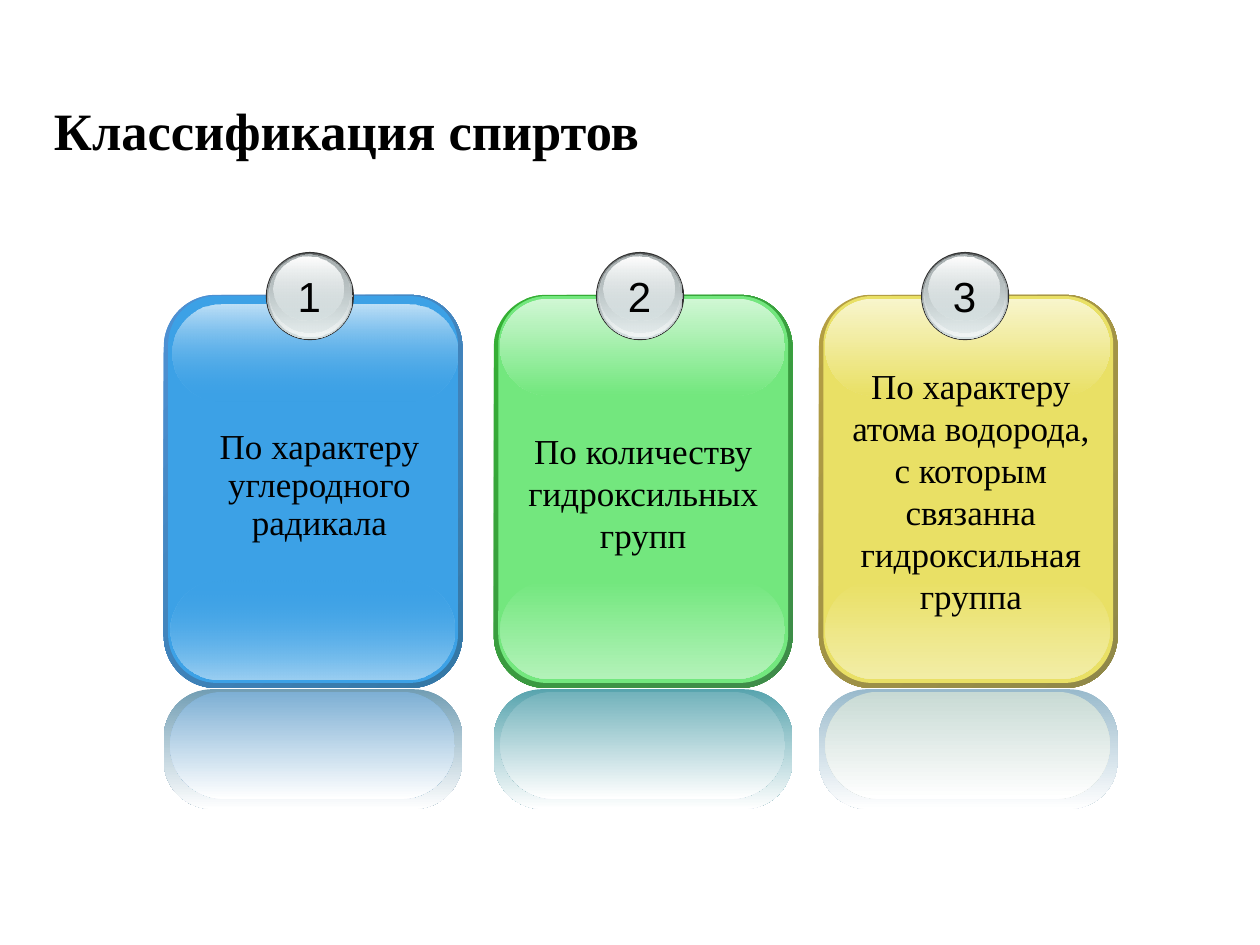
import dataclasses

import pptx
import pptx.dml.color
import pptx.enum.shapes
import pptx.enum.text
import pptx.oxml
import pptx.oxml.ns
import pptx.util

SHAPE = pptx.enum.shapes.MSO_SHAPE
ANCHOR = pptx.enum.text.MSO_ANCHOR
ALIGN = pptx.enum.text.PP_ALIGN


@dataclasses.dataclass(frozen=True)
class Theme:
    ink: str = "000000"
    serif: str = "Times New Roman"
    sans: str = "Arial"
    title_size: int = 30
    badge_size: int = 24
    body_size: int = 20
    rim: str = "333333"
    badge_layers: tuple = (
        ("636869", "D6E1E2", 100, 100),
        ("D6E1E2", "F1F5F5", 0, 100),
        ("AAB2B3", "D6E1E2", 100, 48),
        ("FFFFFF", "D6E1E2", 100, 38),
    )
    fade: str = "FFFFFF"


@dataclasses.dataclass(frozen=True)
class Card:
    left: float
    text: str
    text_box: tuple
    face: str
    edge: tuple
    shine: str
    glow: str
    mirror: tuple
    shine_at: tuple = (0.5, 23.7)
    alpha: int = 100
    spacing: float = 1.0


CARDS = (
    Card(13, "По характеру углеродного радикала", (2.6, 33.6, 19.5, 10.1),
         "3CA1E6", ("4E91D4", "3477A4"), "BEE0F7", "9BCFF2",
         ("729EB4", "7DAFD4"), shine_at=(0.7, 24.2), alpha=0, spacing=0.9),
    Card(39.2, "По количеству гидроксильных групп", (0.6, 33.6, 22.5, 11.1),
         "73E77E", ("34B034", "3F8B4A"), "D0F7D4", "B3F2B9",
         ("58A4AE", "72B2BB")),
    Card(65, "По характеру атома водорода, с которым связанна гидроксильная группа",
         (0.8, 28.4, 22.5, 21.2),
         "E9E065", ("B59F43", "8F8849"), "F8F5CC", "F2EDA6",
         ("99BACC", "C8DAD4")),
)

BADGE_BOXES = (
    (8.2, 20.1, 6.8, 6.8),
    (8.3, 20.1, 6.6, 6.6),
    (8.4, 20.2, 6.3, 6.2),
    (8.7, 20.4, 5.6, 5),
)


class SlideBuilder:
    COLS, ROWS = 100, 75

    def __init__(self, prs, theme):
        self.theme = theme
        self.col = prs.slide_width / self.COLS
        self.row = prs.slide_height / self.ROWS
        self.slide = prs.slides.add_slide(prs.slide_layouts[6])
        self.shapes = self.slide.shapes
        self.left = 0

    def place(self, box):
        x, y, w, h = box
        return (round((self.left + x) * self.col), round(y * self.row),
                round(w * self.col), round(h * self.row))

    def shape(self, kind, box, color, adj=None):
        sp = self.shapes.add_shape(kind, *self.place(box))
        sp.shadow.inherit = False
        sp.line.fill.background()
        sp.fill.solid()
        sp.fill.fore_color.rgb = pptx.dml.color.RGBColor.from_string(color)
        if adj is not None:
            sp.adjustments[0] = adj
        return sp

    def gradient(self, kind, box, start, end, start_alpha=100, end_alpha=100,
                 adj=None, angle=90):
        sp = self.shape(kind, box, start, adj)
        sp.fill.gradient()
        sp.fill.gradient_angle = 360 - angle
        for stop, color in zip(sp.fill.gradient_stops, (start, end)):
            stop.color.rgb = pptx.dml.color.RGBColor.from_string(color)
        tints = sp.element.spPr.findall(".//" + pptx.oxml.ns.qn("a:srgbClr"))
        for tint, alpha in zip(tints, (start_alpha, end_alpha)):
            if alpha < 100:
                tint.append(pptx.oxml.parse_xml(
                    f'<a:alpha {pptx.oxml.ns.nsdecls("a")} val="{alpha * 1000}"/>'))
        return sp

    def text(self, box, text, size, font, bold=False, align=ALIGN.CENTER,
             anchor=ANCHOR.TOP, wrap=True, spacing=1.0):
        tf = self.shapes.add_textbox(*self.place(box)).text_frame
        tf.word_wrap = wrap
        tf.vertical_anchor = anchor
        p = tf.paragraphs[0]
        p.text = text
        p.alignment = align
        p.line_spacing = spacing
        p.font.size = pptx.util.Pt(size)
        p.font.name = font
        p.font.bold = bold
        p.font.color.rgb = pptx.dml.color.RGBColor.from_string(self.theme.ink)

    def title(self, text):
        self.text((3.3, 7.2, 54.2, 6.2), text, self.theme.title_size,
                  self.theme.serif, bold=True, align=ALIGN.LEFT,
                  anchor=ANCHOR.MIDDLE)

    def badge(self, number):
        self.shape(SHAPE.OVAL, (8.1, 20, 7, 7), self.theme.rim)
        for box, layer in zip(BADGE_BOXES, self.theme.badge_layers):
            self.gradient(SHAPE.OVAL, box, *layer)
        self.text((9.6, 21, 3.9, 5), str(number), self.theme.badge_size,
                  self.theme.sans, wrap=False)

    def card(self, number, card):
        self.shapes = self.slide.shapes.add_group_shape().shapes
        self.left = card.left
        rect = SHAPE.ROUNDED_RECTANGLE
        self.gradient(rect, (0, 23.4, 23.7, 31.2), *card.edge, adj=0.175, angle=45)
        self.shape(rect, (0.35, 23.5, 23, 30.7), card.face, adj=0.167)
        self.gradient(rect, (0.5, 46.1, 22.6, 7.8), card.face, card.glow,
                      start_alpha=card.alpha, adj=0.5)
        self.gradient(rect, (*card.shine_at, 22.6, 7.7), card.shine, card.face,
                      end_alpha=card.alpha, adj=0.5)
        outer, inner = card.mirror
        self.gradient(rect, (0, 54.7, 23.7, 9.5), outer, self.theme.fade, adj=0.404)
        self.gradient(rect, (0.5, 54.9, 22.6, 8.5), inner, self.theme.fade, adj=0.5)
        self.badge(number)
        self.text(card.text_box, card.text, self.theme.body_size,
                  self.theme.serif, spacing=card.spacing)


def main():
    prs = pptx.Presentation()
    prs.slide_width = pptx.util.Inches(10)
    prs.slide_height = pptx.util.Inches(7.5)
    builder = SlideBuilder(prs, Theme())
    builder.title("Классификация спиртов")
    for number, card in enumerate(CARDS, 1):
        builder.card(number, card)
    prs.save("out.pptx")


if __name__ == "__main__":
    main()
